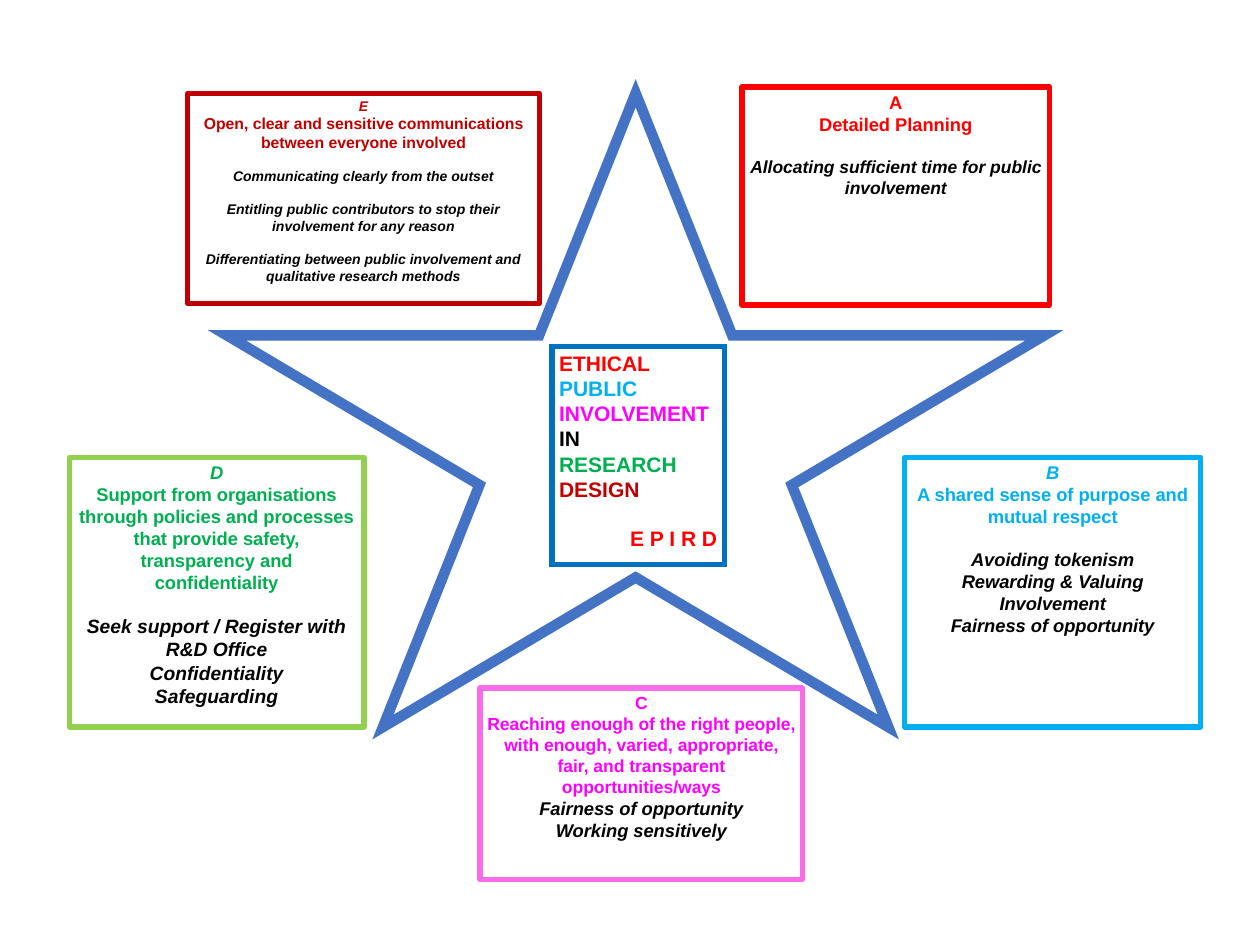
from lxml import etree
from pptx import Presentation
from pptx.dml.color import RGBColor
from pptx.enum.shapes import MSO_SHAPE
from pptx.enum.text import MSO_ANCHOR, PP_ALIGN
from pptx.oxml.ns import qn
from pptx.util import Pt

STAR, RECTANGLE = MSO_SHAPE.STAR_5_POINT, MSO_SHAPE.RECTANGLE
LEFT, CENTER, RIGHT = PP_ALIGN.LEFT, PP_ALIGN.CENTER, PP_ALIGN.RIGHT
TOP = MSO_ANCHOR.TOP

WHITE = RGBColor(0xFF, 0xFF, 0xFF)
BLACK = RGBColor(0, 0, 0)
STAR_BLUE = RGBColor(0x44, 0x72, 0xC4)
FRAME_BLUE = RGBColor(0x00, 0x70, 0xC0)
RED = RGBColor(0xFF, 0, 0)
SKY = RGBColor(0x00, 0xB0, 0xF0)
MAGENTA = RGBColor(0xFF, 0, 0xFF)
PINK = RGBColor(0xF9, 0x6B, 0xE8)
GREEN = RGBColor(0x00, 0xB0, 0x50)
LIME = RGBColor(0x92, 0xD0, 0x50)
DARK_RED = RGBColor(0xC0, 0, 0)

FONT = "Arial"
LINE_HEIGHT = 1.15


def add_outline(page, kind, bounds, color, width, sharp=False):
    """Add a white shape with a coloured outline; sharp gives mitred corners."""
    shape = page.shapes.add_shape(kind, *(Pt(length) for length in bounds))
    shape.shadow.inherit = False
    shape.fill.solid()
    shape.fill.fore_color.rgb = WHITE
    shape.line.color.rgb = color
    shape.line.width = Pt(width)
    if sharp:
        line = shape.line._get_or_add_ln()
        etree.SubElement(line, qn("a:miter"), lim="800000")
    return shape


def prepare_text(box):
    frame = box.text_frame
    frame.word_wrap = True
    frame.vertical_anchor = TOP
    frame.margin_left = frame.margin_right = Pt(4.1)
    frame.margin_top = frame.margin_bottom = Pt(2.2)
    return frame


def add_line(frame, text, size, color, align=CENTER, italic=False, gap=0):
    """Add a bold paragraph; gap is the type size of the blank line above it."""
    first = frame.paragraphs[0]
    para = first if not first.runs else frame.add_paragraph()
    para.alignment = align
    para.space_before = Pt(round(gap * LINE_HEIGHT, 2))
    span = para.add_run()
    span.text = text
    span.font.name = FONT
    span.font.size = Pt(size)
    span.font.bold = True
    span.font.italic = italic
    span.font.color.rgb = color


def add_center_box(page):
    box = add_outline(page, RECTANGLE, (315.4, 198, 98.6, 124.6),
                      FRAME_BLUE, 3, sharp=True)
    frame = prepare_text(box)
    words = [("ETHICAL", RED), ("PUBLIC", SKY), ("INVOLVEMENT", MAGENTA),
             ("IN", BLACK), ("RESEARCH", GREEN), ("DESIGN", DARK_RED)]
    for word, color in words:
        add_line(frame, word, 12, color, LEFT)
    add_line(frame, "E P I R D", 12, RED, RIGHT, gap=12)


def add_principle(page, bounds, border, color, letter, heading, points):
    """letter is (text, size, italic), heading (text, size), points (text, size, gap)."""
    frame = prepare_text(add_outline(page, RECTANGLE, bounds, border, 3))
    text, size, italic = letter
    add_line(frame, text, size, color, italic=italic)
    add_line(frame, *heading, color)
    for text, size, gap in points:
        add_line(frame, text, size, BLACK, italic=True, gap=gap)


PRINCIPLES = [
    ((517, 261.4, 169.2, 154.1), SKY, SKY, ("B", 10.5, True),
     ("A shared sense of purpose and mutual respect", 10.5),
     [("Avoiding tokenism", 10.5, 10.5),
      ("Rewarding & Valuing", 10.5, 0),
      ("Involvement", 10.5, 0),
      ("Fairness of opportunity", 10.5, 0)]),
    ((274.3, 393.1, 184.4, 109.4), PINK, MAGENTA, ("C", 10, False),
     ("Reaching enough of the right people, with enough, varied, appropriate, "
      "fair, and transparent opportunities/ways", 10),
     [("Fairness of opportunity", 10.5, 0),
      ("Working sensitively", 10.5, 0)]),
    ((39.6, 261.4, 168.5, 154.1), LIME, GREEN, ("D", 10.5, True),
     ("Support from organisations through policies and processes that provide "
      "safety, transparency and confidentiality", 10.5),
     [("Seek support / Register with R&D Office", 11, 10.5),
      ("Confidentiality", 11, 0),
      ("Safeguarding", 11, 0)]),
    ((107.3, 53.3, 200.9, 120.2), DARK_RED, DARK_RED, ("E", 8, True),
     ("Open, clear and sensitive communications between everyone involved", 9),
     [("Communicating clearly from the outset", 8, 8),
      ("Entitling public contributors to stop their involvement "
       "for any reason", 8, 8),
      ("Differentiating between public involvement and qualitative "
       "research methods", 8, 8)]),
    ((424.1, 49.7, 175.7, 124.6), RED, RED, ("A", 10.5, False),
     ("Detailed Planning", 10.5),
     [("Allocating sufficient time for public involvement", 10, 10.5)]),
]


def main():
    deck = Presentation()
    deck.slide_width, deck.slide_height = Pt(720), Pt(540)
    page = deck.slides.add_slide(deck.slide_layouts[6])
    add_outline(page, STAR, (129.6, 53.3, 467.3, 362.2), STAR_BLUE, 6, sharp=True)
    add_center_box(page)
    for principle in PRINCIPLES:
        add_principle(page, *principle)
    deck.save("out.pptx")


if __name__ == "__main__":
    main()
